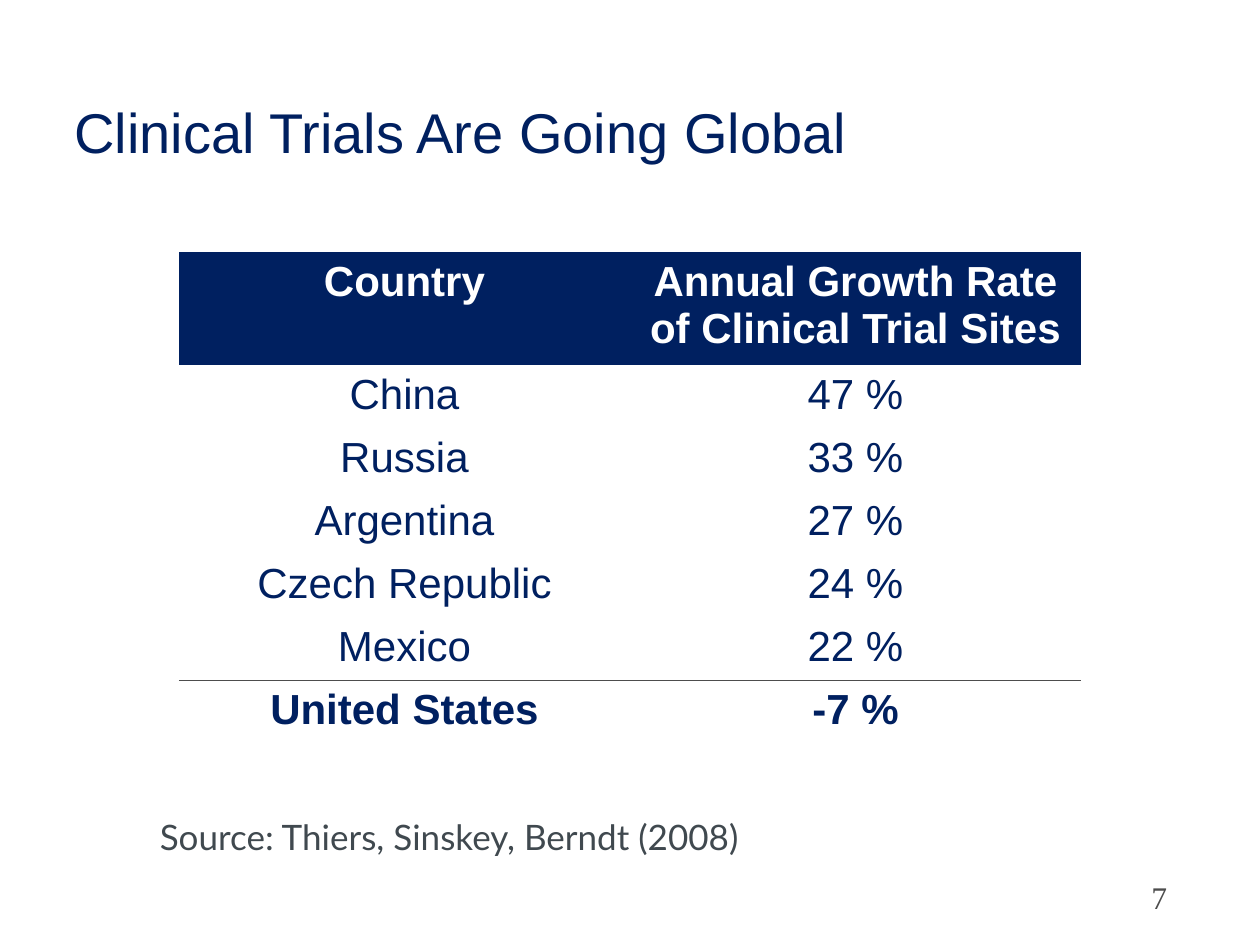
"""Build a slide with a table of clinical trial growth by country."""
from lxml import etree
from pptx import Presentation
from pptx import util as u
from pptx.dml import color
from pptx.enum import text
from pptx.oxml import ns

NAVY, WHITE, GREY = "002060", "FFFFFF", "4D4D4D"


def rgb(value):
    """Turn a hex string into a colour."""
    return color.RGBColor.from_string(value)


def write(frame, words, align, shade, **formats):
    """Fill a text frame with one formatted paragraph."""
    frame.word_wrap = True
    para = frame.paragraphs[0]
    para.alignment = align
    span = para.add_run()
    span.text = words
    span.font.color.rgb = rgb(shade)
    for name, value in formats.items():
        setattr(span.font, name, value)


deck = Presentation()
deck.slide_width, deck.slide_height = u.Pt(720), u.Pt(540)
page = deck.slides.add_slide(deck.slide_layouts[5])
center, left = text.PP_ALIGN.CENTER, text.PP_ALIGN.LEFT

title = page.shapes.title
place = {"left": 25.2, "top": 54.7, "width": 476, "height": 40.3}
for name, value in place.items():
    setattr(title, name, u.Pt(value))
title.text_frame.vertical_anchor = text.MSO_ANCHOR.MIDDLE
write(title.text_frame, "Clinical Trials Are Going Global", center, NAVY,
      size=u.Pt(32), name="Arial")

rows = [
    ("Country", "Annual Growth Rate of Clinical Trial Sites"),
    ("China", "47 %"),
    ("Russia", "33 %"),
    ("Argentina", "27 %"),
    ("Czech Republic", "24 %"),
    ("Mexico", "22 %"),
    ("United States", "-7 %"),
]
last = len(rows) - 1
table = page.shapes.add_table(len(rows), 2, u.Pt(102.25), u.Pt(144),
                              u.Pt(515.5), u.Pt(280.8)).table
table.first_row = table.horz_banding = False
style = table._tbl.tblPr.find(ns.qn("a:tableStyleId"))
style.text = "{2D5ABB26-0587-4C30-8999-92F81FD0307C}"
borders = {last - 1: "a:lnB", last: "a:lnT"}

for row, labels in enumerate(rows):
    table.rows[row].height = u.Pt(36 if row else 64.8)
    for column, label in enumerate(labels):
        cell = table.cell(row, column)
        cell.fill.solid()
        cell.fill.fore_color.rgb = rgb(WHITE if row else NAVY)
        write(cell.text_frame, label, center, NAVY if row else WHITE,
              size=u.Pt(24), name="Arial", bold=row in (0, last))
        if row in borders:
            line = etree.Element(ns.qn(borders[row]), w=str(u.Pt(1)))
            fill = etree.SubElement(line, ns.qn("a:solidFill"))
            etree.SubElement(fill, ns.qn("a:srgbClr"), val=GREY)
            cell._tc.get_or_add_tcPr().insert(0, line)

notes = [
    ("Source: Thiers, Sinskey, Berndt (2008)", (84.25, 462.25, 432, 31.5), "40494F", 20, "Lato"),
    ("7", (650.9, 498.25, 60, 36), GREY, 18, "Times New Roman"),
]
for words, spot, shade, size, font in notes:
    box = page.shapes.add_textbox(*map(u.Pt, spot))
    write(box.text_frame, words, left, shade, size=u.Pt(size), name=font)

deck.save("out.pptx")
